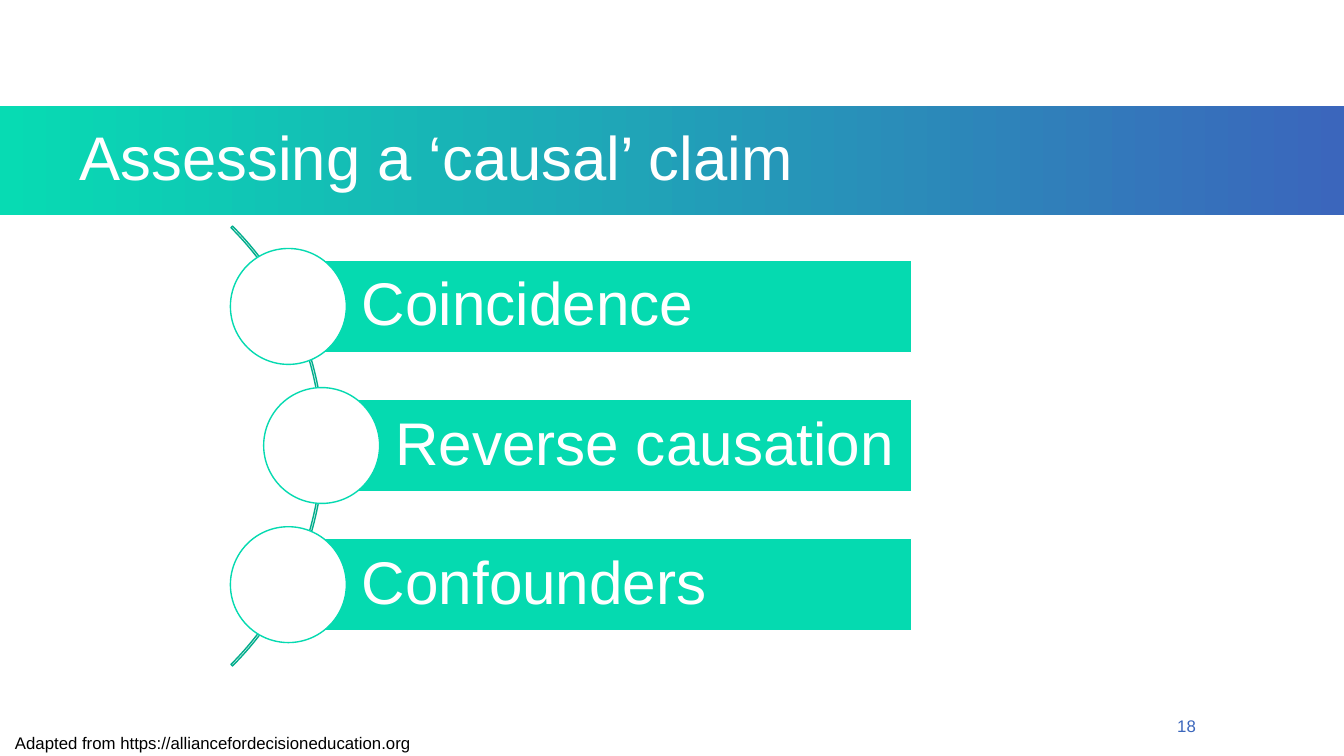
from dataclasses import dataclass

import pptx
import pptx.dml.color
import pptx.enum.shapes
import pptx.enum.text
import pptx.util
from pptx.util import Inches

SHAPE = pptx.enum.shapes.MSO_SHAPE
ANCHOR = pptx.enum.text.MSO_ANCHOR
ALIGN = pptx.enum.text.PP_ALIGN
rgb = pptx.dml.color.RGBColor.from_string


@dataclass(frozen=True)
class Theme:
    font: str = "Arial"
    white: str = "FFFFFF"
    black: str = "000000"
    blue: str = "3B66BC"
    band_start: str = "07DBB3"
    green: str = "05DAB0"
    arc: str = "02AD8C"
    title_size: float = 44
    item_size: float = 43
    small_size: float = 12


theme = Theme()


def write(sp, text, size, color, anchor, align=ALIGN.LEFT, spacing=1.0):
    """Put one formatted paragraph into a shape and return the paragraph."""
    tf = sp.text_frame
    tf.text = text
    tf.word_wrap = True
    tf.auto_size = pptx.enum.text.MSO_AUTO_SIZE.NONE
    tf.vertical_anchor = anchor
    p = tf.paragraphs[0]
    p.alignment = align
    p.line_spacing = spacing
    font = p.runs[0].font
    font.name = theme.font
    font.size = pptx.util.Pt(size)
    font.color.rgb = rgb(color)
    return p


def outlined(shapes, kind, box, line, fill=None):
    sp = shapes.add_shape(kind, *map(Inches, box))
    sp.shadow.inherit = False
    if fill:
        sp.fill.solid()
        sp.fill.fore_color.rgb = rgb(fill)
    else:
        sp.fill.background()
    sp.line.color.rgb = rgb(line)
    sp.line.width = pptx.util.Pt(1)
    return sp


prs = pptx.Presentation()
prs.slide_width, prs.slide_height = Inches(13.33), Inches(7.5)
s = prs.slides.add_slide(prs.slide_layouts[5])

# Title band
title = s.shapes.title
title.left, title.top = Inches(0), Inches(1.05)
title.width, title.height = prs.slide_width, Inches(1.08)
title.fill.gradient()
title.fill.gradient_angle = 0
for stop, color in zip(title.fill.gradient_stops, (theme.band_start, theme.blue)):
    stop.color.rgb = rgb(color)
p = write(title, "Assessing a ‘causal’ claim", theme.title_size, theme.white,
          ANCHOR.MIDDLE, spacing=0.9)
title.text_frame.margin_left = Inches(0.79)

# Curved list: each bar starts at the centre of its circle
curved_list = s.shapes.add_group_shape().shapes
arc = outlined(curved_list, SHAPE.BLOCK_ARC, (-2.96, 1.34, 6.17, 6.17), theme.arc)
for i, value in enumerate((189, 27, 0.0035)):
    arc.adjustments[i] = value

diameter, bar_height, bar_right = 1.15, 0.92, 9.04
middle_y, row_step = 4.42, 1.38
items = [("Coincidence", 2.86), ("Reverse causation", 3.19), ("Confounders", 2.86)]
for row, (label, x) in enumerate(items):
    y = middle_y + (row - 1) * row_step
    bar = outlined(curved_list, SHAPE.RECTANGLE,
                   (x, y - bar_height / 2, bar_right - x, bar_height),
                   theme.white, theme.green)
    write(bar, label, theme.item_size, theme.white, ANCHOR.MIDDLE, spacing=0.9)
    tf = bar.text_frame
    tf.margin_left = Inches(0.73)
    tf.margin_top = tf.margin_right = tf.margin_bottom = Inches(0.12)
    outlined(curved_list, SHAPE.OVAL,
             (x - diameter / 2, y - diameter / 2, diameter, diameter),
             theme.green, theme.white)

# Footer
number = s.shapes.add_textbox(Inches(8.96), Inches(7.1), Inches(3), Inches(0.25))
write(number, "18", theme.small_size, theme.blue, ANCHOR.BOTTOM, ALIGN.RIGHT)
credit = s.shapes.add_textbox(Inches(0.05), Inches(7.19), Inches(13.24), Inches(0.31))
write(credit, "Adapted from https://alliancefordecisioneducation.org",
      theme.small_size, theme.black, ANCHOR.TOP, spacing=1.15)

prs.save("out.pptx")
